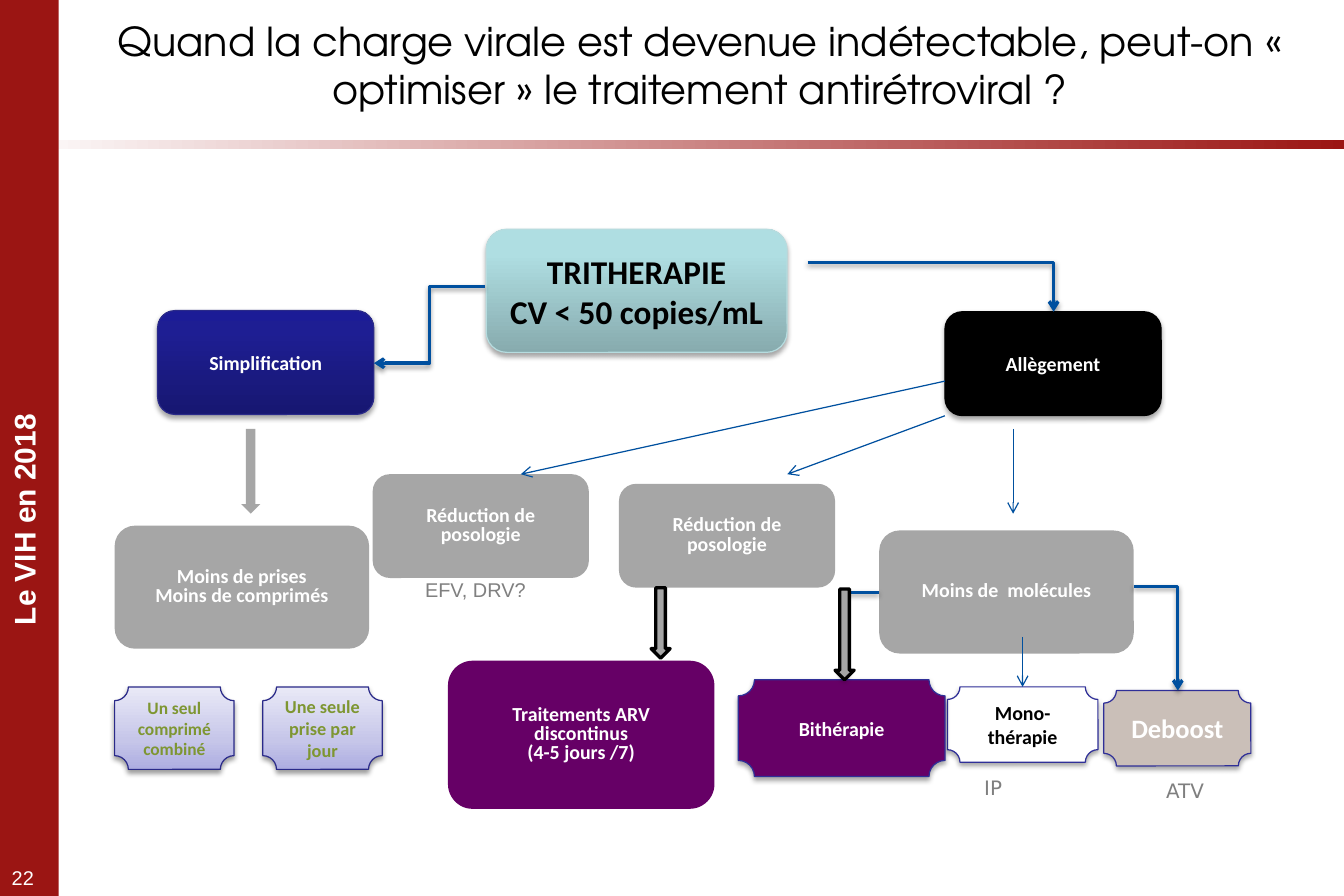
from dataclasses import dataclass

from lxml.etree import SubElement
from pptx import Presentation
from pptx.dml.color import RGBColor
from pptx.enum.shapes import MSO_CONNECTOR, MSO_SHAPE
from pptx.enum.text import MSO_ANCHOR, MSO_AUTO_SIZE, PP_ALIGN
from pptx.oxml.ns import qn
from pptx.util import Pt

COLOURS = {
    "red": "9B1513", "white": "FFFFFF", "black": "000000", "grey": "A6A6A6",
    "purple": "660066", "beige": "CABFB8", "olive": "7E9632", "blue": "00509F",
    "navy": "2A2A89", "indigo": "2F2F98", "aqua": "B6DCDF",
    "caption": "808080", "note": "7F7F7F",
}
# Gradient stops (percent, colour), from the bottom of the shape upwards
GRADIENTS = {
    "turquoise": [(0, "87ABAE"), (80, "AFDEE2"), (100, "AFE0E4")],
    "lavender": [(0, "ADADE1"), (35, "C6C6E9"), (100, "E9E9F7")],
    "midnight": [(0, "171771"), (80, "1E1E93"), (100, "1C1C96")],
    "rule": [(0, "FFFFFF"), (100, "9B1513")],
}
ROUND, PLAQUE = MSO_SHAPE.ROUNDED_RECTANGLE, MSO_SHAPE.PLAQUE
RECTANGLE, DOWN = MSO_SHAPE.RECTANGLE, MSO_SHAPE.DOWN_ARROW


@dataclass
class Node:
    kind: MSO_SHAPE
    left: float
    top: float
    width: float
    height: float
    fill: str
    lines: tuple[str, ...] = ()
    colour: str = "white"
    size: float = 12
    spacing: float = 1.0
    outline: str = ""
    weight: float = 0.75
    shadow: int = 0
    angle: int = 90


@dataclass
class Link:
    start: tuple[float, float]
    end: tuple[float, float]
    preset: str = "line"


@dataclass
class Caption:
    left: float
    top: float
    width: float
    height: float
    text: str
    font: str
    colour: str
    size: float = 12
    bold: bool = False
    align: PP_ALIGN = PP_ALIGN.LEFT
    rotation: int = 0
    wrap: bool = True


FRAME = [
    Node(RECTANGLE, 0, 84.2, 810, 5.8, "rule", angle=0),
    Node(RECTANGLE, 0, 0, 35.3, 540, "red"),
]
NODES = [
    Node(ROUND, 293, 138.2, 181.4, 74.2, "turquoise", ("TRITHERAPIE", "CV < 50 copies/mL"),
         "black", 20, outline="aqua", shadow=35),
    Node(ROUND, 69.1, 316.8, 153.4, 74.2, "grey",
         ("Moins de prises", "Moins de comprimés"), spacing=0.8),
    Node(PLAQUE, 158.4, 414, 72, 49.7, "lavender", ("Une seule prise par jour",),
         "olive", 11, outline="navy", shadow=38),
    Node(PLAQUE, 69.1, 414, 72, 49.7, "lavender", ("Un seul comprimé combiné",),
         "olive", 10.5, outline="navy", shadow=38),
    Node(ROUND, 224.6, 285.8, 130.3, 62.6, "grey", ("Réduction de posologie",), spacing=0.8),
    Node(ROUND, 270, 398.2, 160.6, 89.3, "purple",
         ("Traitements ARV discontinus", "(4-5 jours /7)"), spacing=0.8),
    Node(ROUND, 373, 291.6, 130.3, 62.6, "grey", ("Réduction de posologie",), spacing=0.8),
    Node(ROUND, 529.9, 319.7, 153.4, 74.2, "grey", ("Moins de  molécules",), spacing=0.8),
    Node(PLAQUE, 571, 414, 90.7, 45.4, "white", ("Mono-thérapie",), "black",
         outline="indigo", shadow=35),
    Node(PLAQUE, 445, 409.7, 124.6, 58.3, "purple", ("Bithérapie",),
         outline="indigo", shadow=35),
    Node(PLAQUE, 665.3, 416.2, 88.6, 45.4, "beige", ("Deboost",), size=16,
         outline="indigo", shadow=35),
    Node(ROUND, 95, 187.2, 130.3, 62.6, "midnight", ("Simplification",),
         outline="navy", shadow=35),
    Node(ROUND, 569.5, 187.9, 130.3, 62.6, "black", ("Allègement",),
         outline="black", shadow=35),
]
LINKS = [
    Link((569.5, 229.7), (313.9, 285.8)),
    Link((569.5, 250.6), (474.5, 285.8)),
    Link((610.6, 258.5), (610.6, 309.6)),
    Link((616.3, 383.8), (616.3, 414)),
    Link((683.3, 353.5), (709.9, 416.2), "bentConnector2"),
    Link((529.9, 357.1), (509, 409.7), "bentConnector2"),
    Link((486.7, 158.4), (635, 187.9), "bentConnector2"),
    Link((292.3, 172.8), (225.4, 218.9), "bentConnector3"),
]
BLOCK_ARROWS = [
    Node(DOWN, 145.4, 258.5, 11.5, 51.1, "grey"),
    Node(DOWN, 392.4, 354.2, 11.5, 42.5, "grey", outline="black", weight=2),
    Node(DOWN, 503.3, 355, 11.5, 54.7, "grey", outline="black", weight=2),
]
CAPTIONS = [
    Caption(-56.9, 298.8, 142.6, 28.8, "Le VIH en 2018", "Arial", "white", 18, True,
            PP_ALIGN.CENTER, 270, False),
    Caption(0, 518.4, 33.1, 21.6, "22", "Arial", "white"),
    Caption(249.1, 344.9, 85, 21.6, "EFV, DRV?", "Arial", "caption"),
    Caption(674.6, 465.8, 79.2, 21.6, "ATV", "DejaVu Sans", "note", align=PP_ALIGN.CENTER),
    Caption(586.1, 463.7, 62.6, 21.6, "IP", "DejaVu Sans", "note"),
]


def rgb(name: str) -> RGBColor:
    return RGBColor.from_string(COLOURS[name])


def add_span(para, text: str, font: str, size: float, colour: str, bold: bool = False) -> None:
    span = para.add_run()
    span.text = text
    span.font.name, span.font.size, span.font.bold = font, Pt(size), bold
    span.font.color.rgb = rgb(colour)


def fill_gradient(shape, stops: list[tuple[int, str]], angle: int) -> None:
    shape.fill.gradient()
    shape.fill.gradient_angle = angle
    stop_list = shape.element.spPr.find(qn("a:gradFill")).find(qn("a:gsLst"))
    stop_list.clear()
    for percent, colour in stops:
        stop = SubElement(stop_list, qn("a:gs"), pos=str(percent * 1000))
        SubElement(stop, qn("a:srgbClr"), val=colour)


def add_shadow(effects, opacity: int) -> None:
    shadow = SubElement(effects, qn("a:outerShdw"), blurRad=str(Pt(3.1)), dist=str(Pt(1.8)),
                        dir="5400000", algn="ctr", rotWithShape="0")
    colour = SubElement(shadow, qn("a:srgbClr"), val=COLOURS["black"])
    SubElement(colour, qn("a:alpha"), val=str(opacity * 1000))


def draw_node(page, node: Node) -> None:
    shape = page.shapes.add_shape(node.kind, Pt(node.left), Pt(node.top),
                                  Pt(node.width), Pt(node.height))
    if node.fill in GRADIENTS:
        fill_gradient(shape, GRADIENTS[node.fill], node.angle)
    else:
        shape.fill.solid()
        shape.fill.fore_color.rgb = rgb(node.fill)
    if node.outline:
        shape.line.color.rgb = rgb(node.outline)
        shape.line.width = Pt(node.weight)
    else:
        shape.line.fill.background()
    shape.shadow.inherit = False
    if node.shadow:
        add_shadow(shape.element.spPr.find(qn("a:effectLst")), node.shadow)
    frame = shape.text_frame
    frame.word_wrap, frame.vertical_anchor = True, MSO_ANCHOR.MIDDLE
    for index, line in enumerate(node.lines):
        para = frame.add_paragraph() if index else frame.paragraphs[0]
        para.alignment, para.line_spacing = PP_ALIGN.CENTER, node.spacing
        add_span(para, line, "Calibri", node.size, node.colour, True)


def draw_link(page, link: Link) -> None:
    """Bent links leave horizontally and carry a shadow."""
    bent = link.preset != "line"
    kind = MSO_CONNECTOR.ELBOW if bent else MSO_CONNECTOR.STRAIGHT
    connector = page.shapes.add_connector(kind, *map(Pt, link.start + link.end))
    connector.line.color.rgb = rgb("blue")
    connector.line.width = Pt(2 if bent else 0.75)
    properties = connector.element.spPr
    properties.find(qn("a:prstGeom")).set("prst", link.preset)
    SubElement(properties.find(qn("a:ln")), qn("a:tailEnd"), type="arrow")
    effects = SubElement(properties, qn("a:effectLst"))
    if bent:
        add_shadow(effects, 38)


def draw_caption(page, caption: Caption) -> None:
    box = page.shapes.add_textbox(Pt(caption.left), Pt(caption.top),
                                  Pt(caption.width), Pt(caption.height))
    box.rotation = caption.rotation
    box.text_frame.word_wrap = caption.wrap
    para = box.text_frame.paragraphs[0]
    para.alignment = caption.align
    add_span(para, caption.text, caption.font, caption.size, caption.colour, caption.bold)


def write_title(page) -> None:
    title = page.shapes.title
    title.left, title.top, title.width, title.height = map(Pt, (40.3, 6.5, 763.2, 71.3))
    frame = title.text_frame
    frame.word_wrap, frame.auto_size = True, MSO_AUTO_SIZE.NONE
    frame.vertical_anchor = MSO_ANCHOR.TOP
    para = frame.paragraphs[0]
    para.alignment = PP_ALIGN.CENTER
    add_span(para, "Quand la charge virale est devenue indétectable, peut-on "
             "« optimiser » le traitement antirétroviral ?", "TeX Gyre Adventor", 24, "black")


def main() -> None:
    deck = Presentation()
    deck.slide_width, deck.slide_height = Pt(810), Pt(540)
    page = deck.slides.add_slide(deck.slide_layouts[5])
    write_title(page)
    for node in FRAME + NODES:
        draw_node(page, node)
    for link in LINKS:
        draw_link(page, link)
    for arrow in BLOCK_ARROWS:
        draw_node(page, arrow)
    for caption in CAPTIONS:
        draw_caption(page, caption)
    deck.save("out.pptx")


if __name__ == "__main__":
    main()
